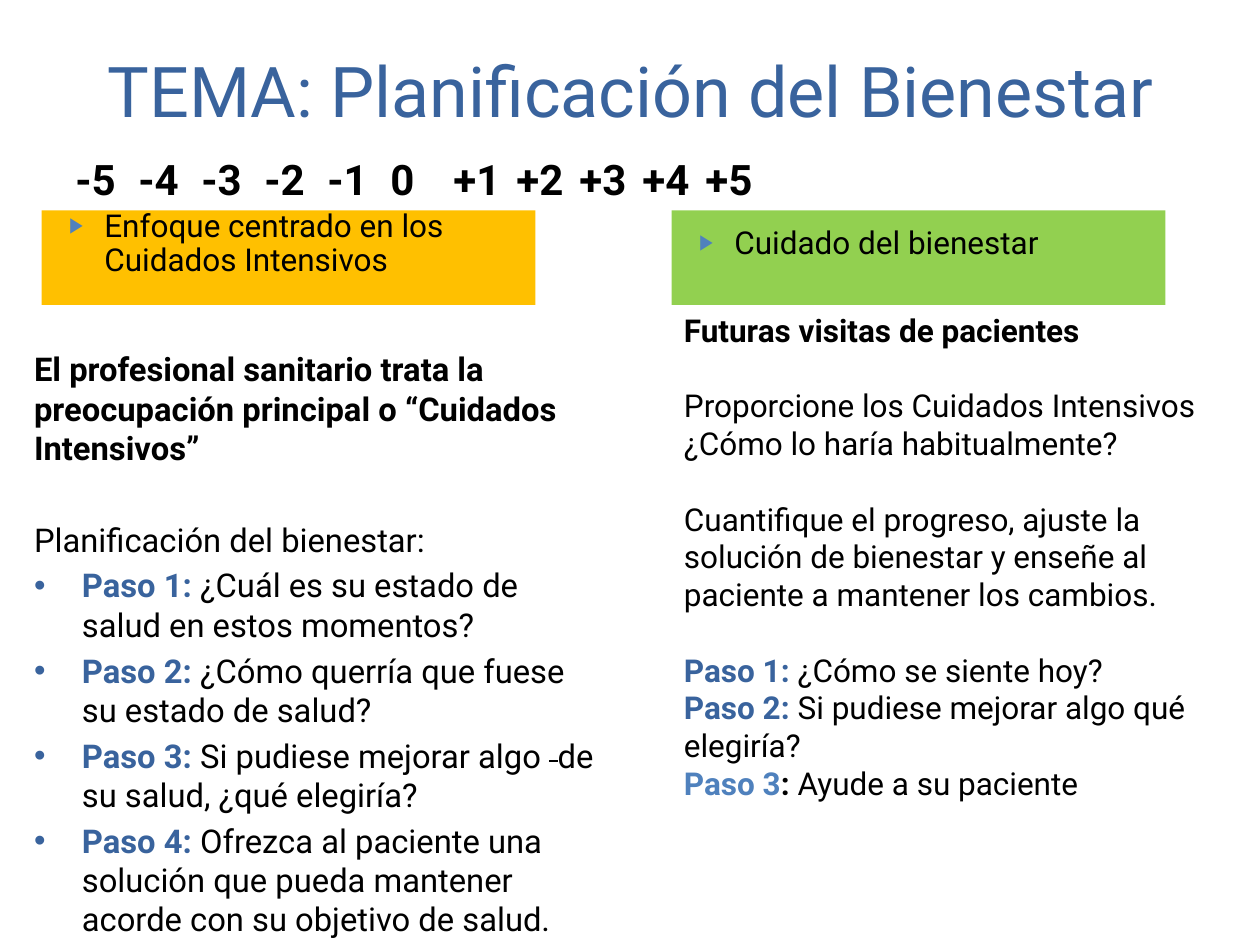
from lxml.etree import SubElement
from pptx import Presentation
from pptx.dml.color import RGBColor
from pptx.enum.shapes import MSO_SHAPE
from pptx.enum.text import MSO_ANCHOR, MSO_AUTO_SIZE, PP_ALIGN
from pptx.oxml.ns import qn
from pptx.util import Inches, Pt

COLORS = {
    "text": "000000",
    "heading": "39639D",
    "accent": "4F81BD",
    "intensive": "FFC000",
    "wellness": "92D050",
}


def add_text(para, spans, size=18, before=0, line=None, align=PP_ALIGN.LEFT,
             margin=0, hanging=0, bullet=None, bullet_color=None, bullet_size=100):
    """Fill a paragraph with (text, color name, bold) spans and format it."""
    para.alignment = align
    para.space_before = Pt(before)
    if line:
        para.line_spacing = line
    for text, color, bold in spans:
        span = para.add_run()
        span.text = text
        span.font.name = "Roboto"
        span.font.size = Pt(size)
        span.font.bold = bold
        span.font.color.rgb = RGBColor.from_string(COLORS[color])
    properties = para._p.get_or_add_pPr()
    properties.set("marL", str(Inches(margin)))
    properties.set("indent", str(-Inches(hanging)))
    if not bullet:
        SubElement(properties, qn("a:buNone"))
        return
    if bullet_color:
        fill = SubElement(properties, qn("a:buClr"))
        SubElement(fill, qn("a:srgbClr"), val=COLORS[bullet_color])
    SubElement(properties, qn("a:buSzPct"), val=str(bullet_size * 1000))
    SubElement(properties, qn("a:buFont"), typeface="Arial")
    SubElement(properties, qn("a:buChar"), char=bullet)


def place(shape, left, top, width, height):
    shape.left, shape.top = Inches(left), Inches(top)
    shape.width, shape.height = Inches(width), Inches(height)


deck = Presentation()
deck.slide_width, deck.slide_height = Inches(10), Inches(7.5)
page = deck.slides.add_slide(deck.slide_layouts[1])

# Title
title = page.shapes.title
place(title, 0.42, 0.25, 9.17, 0.92)
title.text_frame.auto_size = MSO_AUTO_SIZE.NONE
title.text_frame.vertical_anchor = MSO_ANCHOR.MIDDLE
add_text(title.text_frame.paragraphs[0],
         [("TEMA: Planificación del Bienestar", "heading", False)],
         size=40, align=PP_ALIGN.CENTER)

# Current visit
body = page.placeholders[1]
place(body, 0.17, 2.72, 4.67, 4.28)
body.text_frame.auto_size = MSO_AUTO_SIZE.NONE
current_visit = [
    ("", "El profesional sanitario trata la preocupación principal o “Cuidados Intensivos”", 3.74),
    ("", "Planificación del bienestar:", 30),
    ("Paso 1: ", "¿Cuál es su estado de salud en estos momentos?", 3.74),
    ("Paso 2: ", "¿Cómo querría que fuese su estado de salud?", 3.74),
    ("Paso 3: ", "Si pudiese mejorar algo | |de su salud, ¿qué elegiría?", 3.74),
    ("Paso 4: ", "Ofrezca al paciente una solución que pueda mantener acorde con su objetivo de salud.", 3.74),
]
for index, (step, text, before) in enumerate(current_visit):
    para = body.text_frame.add_paragraph() if index else body.text_frame.paragraphs[0]
    spans = [(part, "text", index == 0) for part in text.split("|")]
    if step:
        spans.insert(0, (step, "heading", True))
        add_text(para, spans, size=18.7, before=before,
                 margin=0.38, hanging=0.38, bullet="•")
    else:
        add_text(para, spans, size=18.7, before=before)
    for span in para.runs:
        if span.text == " ":
            span.font._element.set("strike", "sngStrike")

# Scale from -5 to +5, each mark centred on its tab stop
scale = page.shapes.add_textbox(Inches(0), Inches(1.17), Inches(10), Inches(1.08))
scale.text_frame.word_wrap = True
marks = {"-5": 1.67, "-4": 2.33, "-3": 2.98, "-2": 3.55, "-1": 4.19, "0": 4.87,
         "+1": 5.47, "+2": 6.18, "+3": 6.89, "+4": 7.6, "+5": 8.3}
para = scale.text_frame.paragraphs[0]
add_text(para, [("".join("\t" + mark for mark in marks), "text", True)],
         size=24, before=4.8)
tabs = SubElement(para._p.get_or_add_pPr(), qn("a:tabLst"))
for center in marks.values():
    SubElement(tabs, qn("a:tab"), pos=str(Inches(center - 0.1)), algn="ctr")

# Column headings
headings = [
    (0.33, "intensive", "Enfoque centrado en los Cuidados Intensivos", 0, 0.9),
    (5.33, "wellness", "Cuidado del bienestar", 0.1, 1.0),
]
for left, color, text, inset, line in headings:
    box = page.shapes.add_shape(MSO_SHAPE.RECTANGLE, Inches(left), Inches(1.67),
                                Inches(3.92), Inches(0.75))
    box.shadow.inherit = False
    box.fill.solid()
    box.fill.fore_color.rgb = RGBColor.from_string(COLORS[color])
    box.line.fill.background()
    box.text_frame.word_wrap = True
    box.text_frame.vertical_anchor = MSO_ANCHOR.TOP
    box.text_frame.margin_top = Inches(inset)
    add_text(box.text_frame.paragraphs[0], [(text, "text", False)], before=4,
             line=line, margin=0.4, hanging=0.28,
             bullet="▶", bullet_color="accent", bullet_size=68)

# Future visits
future = page.shapes.add_textbox(Inches(5.33), Inches(2.42), Inches(4.67), Inches(4.34))
future.text_frame.word_wrap = True
future_visits = [
    ([("Futuras visitas de pacientes", "text", True)], 0),
    ([("Proporcione los Cuidados Intensivos ¿Cómo lo haría habitualmente?", "text", False)], 21.5),
    ([("Cuantifique el progreso, ajuste la solución de bienestar y enseñe al paciente "
       "a mantener los cambios.", "text", False)], 21.5),
    ([("Paso 1: ", "heading", True), ("¿Cómo se siente hoy?", "text", False)], 21.5),
    ([("Paso 2: ", "heading", True), ("Si pudiese mejorar algo qué elegiría?", "text", False)], 0),
    ([("Paso 3", "accent", True), (": ", "text", True), ("Ayude a su paciente", "text", False)], 0),
]
for index, (spans, before) in enumerate(future_visits):
    para = future.text_frame.add_paragraph() if index else future.text_frame.paragraphs[0]
    add_text(para, spans, before=before)

deck.save("out.pptx")
